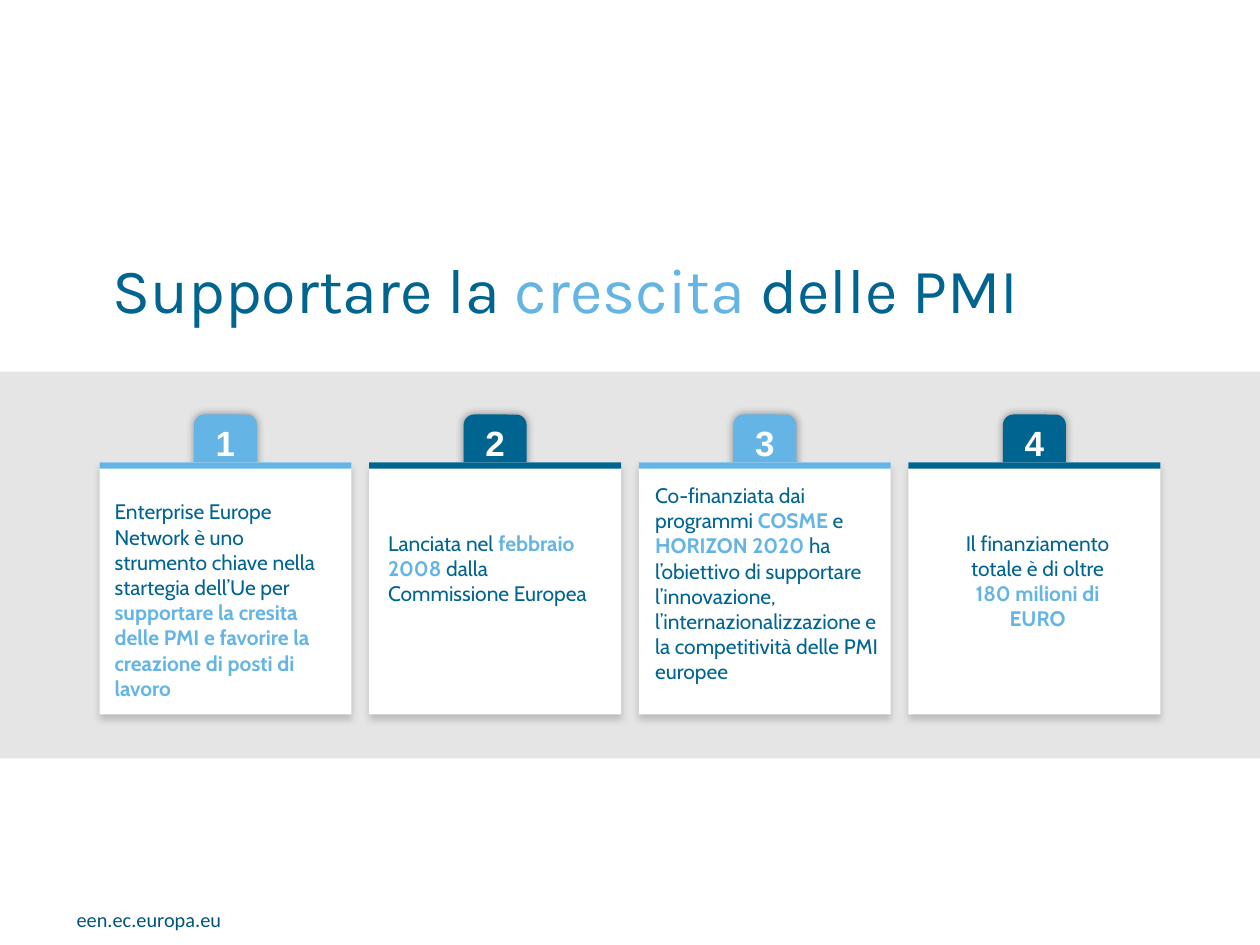
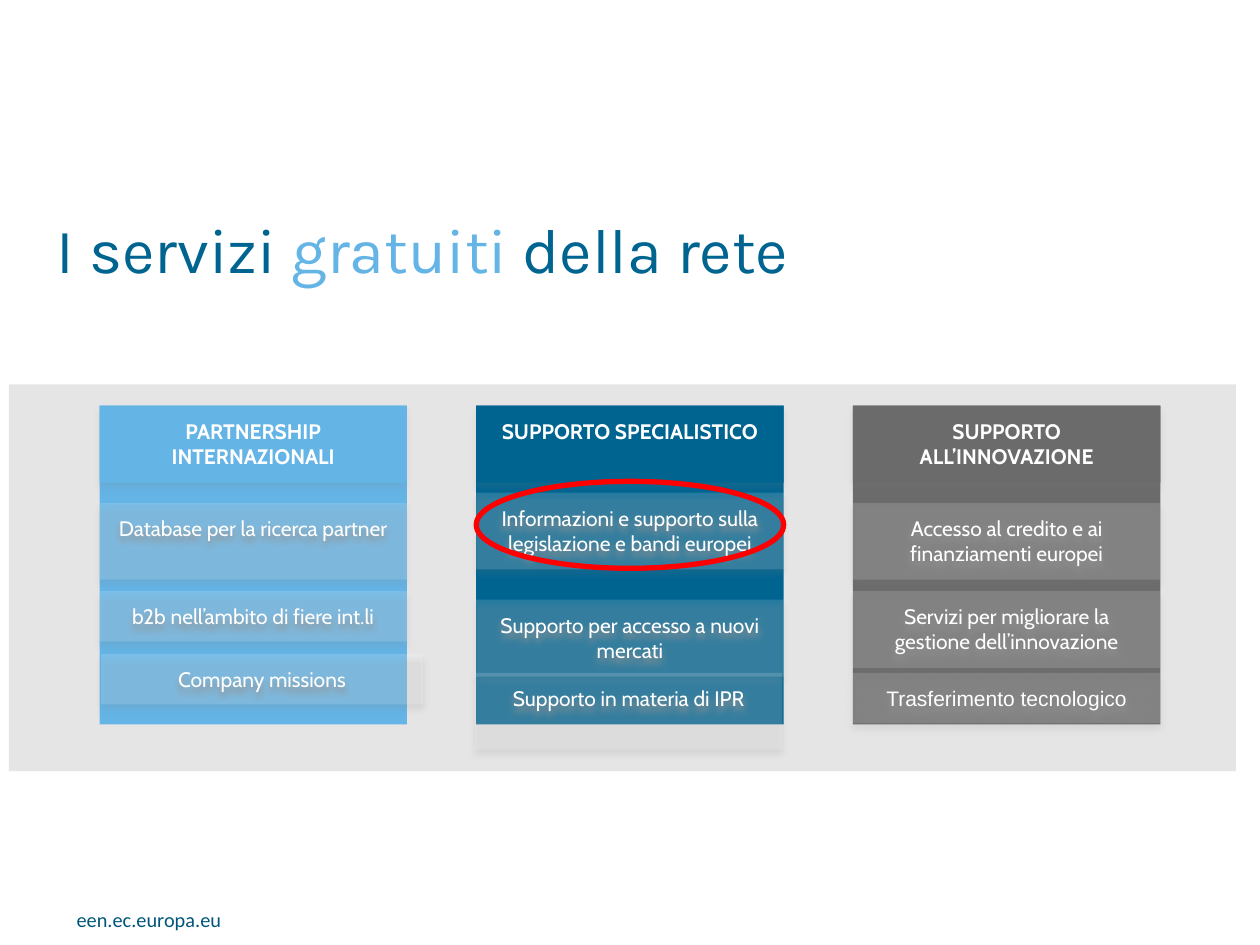
from lxml import etree
from pptx import Presentation
from pptx.dml.color import RGBColor
from pptx.enum import shapes, text
from pptx.oxml.ns import qn
from pptx.util import Inches, Pt

NAVY = RGBColor(0x00, 0x64, 0x91)
SKY = RGBColor(0x64, 0xB4, 0xE6)
GREY = RGBColor(0x6B, 0x6B, 0x6B)
BAND = RGBColor(0xCC, 0xCC, 0xCC)
WHITE = RGBColor(0xFF, 0xFF, 0xFF)
RED = RGBColor(0xFF, 0x00, 0x00)
FOOTER = RGBColor(0x00, 0x56, 0x7A)

RECT = shapes.MSO_SHAPE.RECTANGLE
ROUND = shapes.MSO_SHAPE.ROUNDED_RECTANGLE
LEFT, CENTER = text.PP_ALIGN.LEFT, text.PP_ALIGN.CENTER

# Shadows: colour, opacity %, blur pt, distance pt, direction in degrees
TAB_SHADOW = ("000000", 40, 5, 0, 0)
CARD_SHADOW = ("808080", 40, 4, 3, 90)
ROW_SHADOW = ("808080", 15, 4, 3, 90)


def add_box(s, kind, at, fill, alpha=100, shadow=None):
    """Add a borderless filled shape with optional transparency and shadow."""
    sp = s.shapes.add_shape(kind, *map(Inches, at))
    sp.fill.solid()
    sp.fill.fore_color.rgb = fill
    sp.line.fill.background()
    sp.shadow.inherit = False
    props = sp.element.spPr
    if alpha < 100:
        clr = props.find(qn("a:solidFill")).find(qn("a:srgbClr"))
        etree.SubElement(clr, qn("a:alpha"), val=str(alpha * 1000))
    if shadow:
        color, opacity, blur, dist, angle = shadow
        shd = etree.SubElement(props.find(qn("a:effectLst")), qn("a:outerShdw"),
                               blurRad=str(Pt(blur)), dist=str(Pt(dist)),
                               dir=str(angle * 60000), algn="ctr", rotWithShape="0")
        clr = etree.SubElement(shd, qn("a:srgbClr"), val=color)
        etree.SubElement(clr, qn("a:alpha"), val=str(opacity * 1000))
    return sp


def write(sp, runs, size, name, align=LEFT, inset=None, wrap=True):
    """Fill a shape with one paragraph of (text, colour, bold) runs."""
    tf = sp.text_frame
    frame = {"word_wrap": wrap, "auto_size": text.MSO_AUTO_SIZE.NONE,
             "vertical_anchor": text.MSO_ANCHOR.TOP}
    if inset is not None:
        for side in ("left", "top", "right", "bottom"):
            frame["margin_" + side] = Inches(inset)
    for key, value in frame.items():
        setattr(tf, key, value)
    p = tf.paragraphs[0]
    p.alignment = align
    for words, color, bold in runs:
        r = p.add_run()
        r.text = words
        for key, value in {"size": Pt(size), "name": name, "bold": bold}.items():
            setattr(r.font, key, value)
        r.font.color.rgb = color
    return p


prs = Presentation()
prs.slide_width, prs.slide_height = Inches(10), Inches(7.5)
layout = prs.slide_layouts[5]

# Both slides: grey band and two-colour title
slides = []
for band, title_at, words in [
    ((0, 2.95, 10, 3.07), (0.79, 1.94, 8.5, 0.6),
     ("Supportare la ", "crescita ", "delle PMI")),
    ((0.07, 3.05, 9.74, 3.07), (0.35, 1.62, 8.5, 1.21),
     ("I servizi ", "gratuiti ", "della rete")),
]:
    s = prs.slides.add_slide(layout)
    add_box(s, RECT, band, BAND, alpha=50)
    title = s.shapes.title
    title.left, title.top, title.width, title.height = map(Inches, title_at)
    write(title, [(w, c, False) for w, c in zip(words, (NAVY, SKY, NAVY))], 36, "Karla")
    slides.append(s)
growth, services = slides

# Footer address, moved to the layout so that every slide shows it
footer = growth.shapes.add_textbox(*map(Inches, (0.51, 7.12, 1.54, 0.33)))
p = write(footer, [("een.ec.europa.eu", FOOTER, False)], 20, "Calibri", wrap=False)
p.runs[0].font._element.set("baseline", "30000")
layout.shapes.element.append(footer.element)

# Slide 1: four numbered cards; odd runs of each text are highlighted
CARD_LEFT, CARD_TOP, CARD_SIZE, CARD_PITCH = 0.79, 3.67, 2, 2.14
cards = [
    ((0.91, 3.96, 1.73, 1.6), LEFT,
     ["Enterprise Europe Network è uno strumento chiave nella startegia dell’Ue per ",
      "supportare la cresita delle PMI e favorire la creazione di posti di lavoro"]),
    ((3.08, 4.21, 1.69, 1.1), LEFT,
     ["Lanciata nel ", "febbraio 2008 ", "dalla Commissione Europea"]),
    ((5.2, 3.83, 1.87, 1.97), LEFT,
     ["Co-finanziata dai programmi ", "COSME ", "e ", "HORIZON 2020 ",
      "ha l’obiettivo di supportare l’innovazione, l’internazionalizzazione "
      "e la competitività delle PMI europee"]),
    ((7.57, 4.21, 1.33, 0.77), CENTER,
     ["Il finanziamento totale è di oltre ", "180 milioni di EURO"]),
]
for i, (text_at, align, parts) in enumerate(cards):
    x = CARD_LEFT + i * CARD_PITCH
    accent = (SKY, NAVY)[i % 2]
    add_box(growth, ROUND, (x + 0.75, 3.29, 0.5, 0.53), accent, shadow=TAB_SHADOW)
    number = growth.shapes.add_textbox(*map(Inches, (x + 0.82, 3.3, 0.36, 0.44)))
    write(number, [(str(i + 1), WHITE, True)], 20, "Arial", CENTER, wrap=False)
    add_box(growth, RECT, (x, CARD_TOP, CARD_SIZE, CARD_SIZE), WHITE, shadow=CARD_SHADOW)
    add_box(growth, RECT, (x, CARD_TOP, CARD_SIZE, 0.05), accent)
    body = growth.shapes.add_textbox(*map(Inches, text_at))
    runs = [(t, (NAVY, SKY)[n % 2], n % 2 == 1) for n, t in enumerate(parts)]
    write(body, runs, 12, "Cabin", align, inset=0)

# Slide 2: three service columns; rows are text, left shift, top, width, height, font
COL_LEFT, COL_TOP, COL_WIDTH, COL_PITCH = 0.79, 3.22, 2.44, 2.99
ONE_LINE, TWO_LINES = 0.4, 0.61
columns = [
    ("PARTNERSHIP INTERNAZIONALI", SKY, [
        ("Database per la ricerca partner", 0, 3.99, COL_WIDTH, TWO_LINES, "Cabin"),
        ("b2b nell’ambito di fiere int.li", 0, 4.69, COL_WIDTH, ONE_LINE, "Cabin"),
        ("Company missions", 0.01, 5.19, 2.56, ONE_LINE, "Cabin")]),
    ("SUPPORTO SPECIALISTICO", NAVY, [
        ("Supporto per accesso a nuovi mercati", 0, 4.76, COL_WIDTH, TWO_LINES, "Cabin"),
        ("Supporto in materia di IPR", -0.01, 5.34, COL_WIDTH, TWO_LINES, "Cabin"),
        ("Informazioni e supporto sulla legislazione e bandi europei",
         0, 3.91, COL_WIDTH, TWO_LINES, "Cabin")]),
    ("SUPPORTO ALL’INNOVAZIONE", GREY, [
        ("Accesso al credito e ai finanziamenti europei",
         0, 3.99, COL_WIDTH, TWO_LINES, "Cabin"),
        ("Servizi per migliorare la gestione dell’innovazione",
         0, 4.69, COL_WIDTH, TWO_LINES, "Cabin"),
        ("Trasferimento tecnologico", 0, 5.34, COL_WIDTH, ONE_LINE, "Arial")]),
]
for i, (heading, color, rows) in enumerate(columns):
    x = COL_LEFT + i * COL_PITCH
    add_box(services, RECT, (x, COL_TOP, COL_WIDTH, 2.53), color)
    head = add_box(services, RECT, (x, COL_TOP, COL_WIDTH, TWO_LINES), color,
                   shadow=ROW_SHADOW)
    write(head, [(heading, WHITE, True)], 12, "Cabin", CENTER, inset=0.1)
    for label, shift, top, width, height, name in rows:
        row = add_box(services, RECT, (x + shift, top, width, height), WHITE,
                      alpha=15, shadow=ROW_SHADOW)
        write(row, [(label, WHITE, False)], 12, name, CENTER, inset=0.1)

# Red ring around the highlighted service
ring = services.shapes.add_shape(shapes.MSO_SHAPE.OVAL,
                                 *map(Inches, (3.78, 3.82, COL_WIDTH, 0.69)))
ring.shadow.inherit = False
ring.fill.background()
ring.line.color.rgb = RED
ring.line.width = Pt(3)

prs.save("out.pptx")
